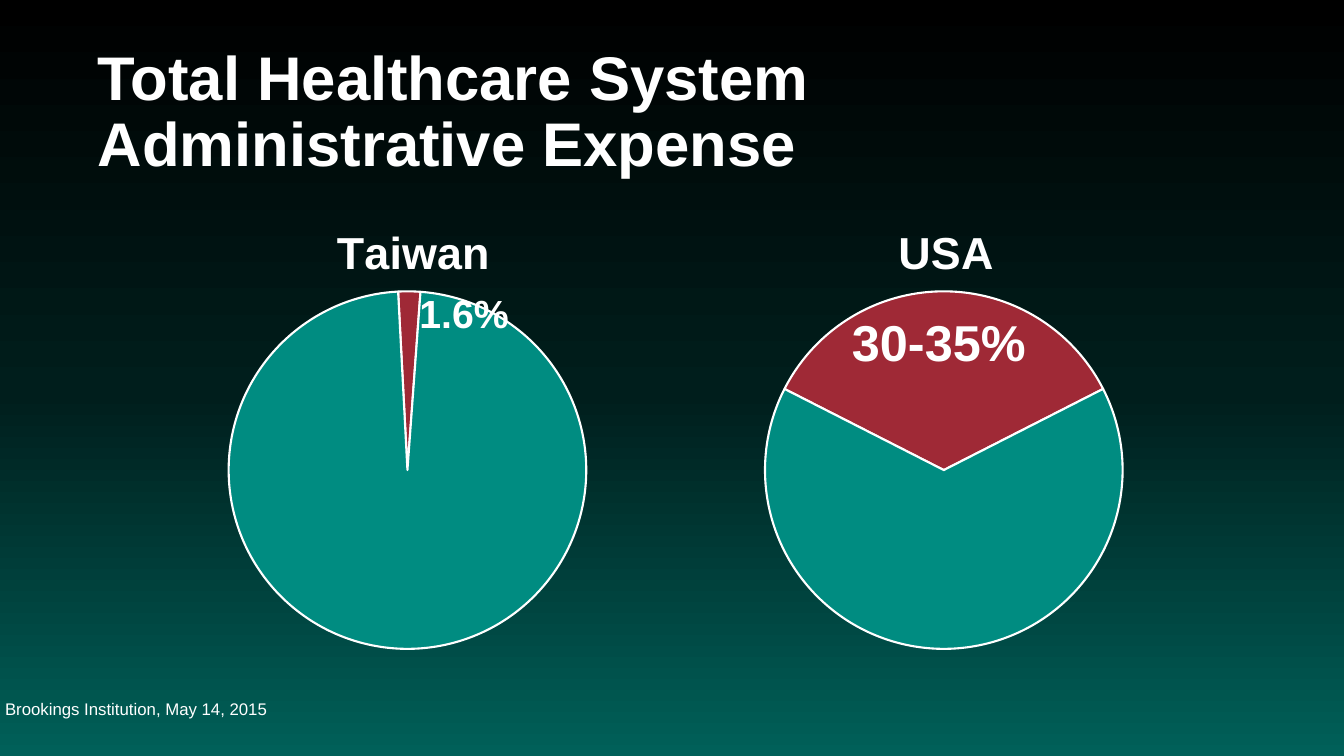
"""Build a slide comparing healthcare administrative expense in two pies."""
import copy

import pptx
import pptx.chart.data
import pptx.dml.color
import pptx.enum.chart
import pptx.enum.text
import pptx.oxml
import pptx.oxml.ns
import pptx.util

RGB = pptx.dml.color.RGBColor
WHITE = RGB(0xFF, 0xFF, 0xFF)
BLACK = RGB(0x00, 0x00, 0x00)
DARK_TEAL = RGB(0x00, 0x1E, 0x1C)
DEEP_TEAL = RGB(0x00, 0x60, 0x59)
TEAL = RGB(0x00, 0x8C, 0x81)
RED = RGB(0x9F, 0x29, 0x36)

WIDTH, HEIGHT = 13.33, 7.5
PIE_WIDTH, PIE_HEIGHT, PIE_TOP = 6.24, 4.73, 1.85
PIE_LEFT, PIE_STEP = 0.89, 5.32


def inches(*lengths):
    """Convert lengths in inches to slide units."""
    return [pptx.util.Inches(n) for n in lengths]


def style_font(font, size, bold=True, name="Arial"):
    """Apply the white lettering used on the slide."""
    font.size, font.bold, font.name = pptx.util.Pt(size), bold, name
    font.color.rgb = WHITE


def paint_background(s):
    """Fill the background with a vertical three-stop gradient."""
    fill = s.background.fill
    fill.gradient()
    fill.gradient_angle = 270
    stops = s.element.find(".//" + pptx.oxml.ns.qn("a:gsLst"))
    stops.insert(1, copy.deepcopy(stops[0]))
    levels = ((0, BLACK), (0.52, DARK_TEAL), (1, DEEP_TEAL))
    for stop, (position, color) in zip(fill.gradient_stops, levels):
        stop.position = position
        stop.color.rgb = color


def add_text(s, box, text, size, bold=True, wrap=True):
    """Add a text box; wrapped ones are centred vertically."""
    tf = s.shapes.add_textbox(*inches(*box)).text_frame
    tf.margin_left, tf.margin_top, tf.margin_right, tf.margin_bottom = inches(*[0.05] * 4)
    tf.word_wrap = wrap
    p = tf.paragraphs[0]
    p.text = text
    if wrap:
        tf.vertical_anchor = pptx.enum.text.MSO_ANCHOR.MIDDLE
        p.line_spacing = 0.9
    for r in p.runs:
        style_font(r.font, size, bold)


def set_layout(parent, position, **shares):
    """Place a chart part by shares of the chart's size."""
    for old in parent.findall(pptx.oxml.ns.qn("c:layout")):
        parent.remove(old)
    target = '<c:layoutTarget val="inner"/>' if "w" in shares else ""
    modes = "".join(f'<c:{k}Mode val="edge"/>' for k in "xy")
    values = "".join(f'<c:{k} val="{v}"/>' for k, v in shares.items())
    parent.insert(position, pptx.oxml.parse_xml(
        f'<c:layout {pptx.oxml.ns.nsdecls("c")}><c:manualLayout>'
        f"{target}{modes}{values}</c:manualLayout></c:layout>"))


def add_pie(s, column, country, share, start, title_x):
    """Add a titled pie whose first slice is the administrative share."""
    data = pptx.chart.data.CategoryChartData()
    data.categories = ["1", "2"]
    data.add_series(country, (share, 100 - share))
    left = PIE_LEFT + column * PIE_STEP
    chart = s.shapes.add_chart(
        pptx.enum.chart.XL_CHART_TYPE.PIE,
        *inches(left, PIE_TOP, PIE_WIDTH, PIE_HEIGHT), data).chart
    style_font(chart.font, 10, False, "Calibri")
    chart.has_legend = False
    tf = chart.chart_title.text_frame
    tf.text = country
    style_font(tf.paragraphs[0].runs[0].font, 32)
    chart.chart_title.include_in_layout = False
    set_layout(chart.chart_title.element, 1, x=title_x, y=0.06)

    plot = chart.plots[0]
    plot.vary_by_categories = True
    for i, color in enumerate((RED, TEAL)):
        fmt = plot.series[0].points[i].format
        fmt.fill.solid()
        fmt.fill.fore_color.rgb = color
        fmt.line.color.rgb = WHITE
        fmt.line.width = pptx.util.Pt(1.5)
    pie = chart.element.find(".//" + pptx.oxml.ns.qn("c:pieChart"))
    for old in pie.findall(pptx.oxml.ns.qn("c:firstSliceAng")):
        pie.remove(old)
    pie.append(pptx.oxml.parse_xml(
        f'<c:firstSliceAng {pptx.oxml.ns.nsdecls("c")} val="{start}"/>'))
    set_layout(pie.getparent(), 0, x=0.22, y=0.22, w=0.57, h=0.75)


def main():
    """Compose and save the slide."""
    prs = pptx.Presentation()
    prs.slide_width, prs.slide_height = inches(WIDTH, HEIGHT)
    s = prs.slides.add_slide(prs.slide_layouts[6])
    paint_background(s)
    add_pie(s, 0, "Taiwan", 2, 357, 0.38)
    add_pie(s, 1, "USA", 35, 297, 0.42)
    add_text(s, (0.92, 0.4, 11.5, 1.45),
             "Total Healthcare System\vAdministrative Expense", 44)
    add_text(s, (0, 6.58, 9, 0.92), "Brookings Institution, May 14, 2015", 12, bold=False)
    add_text(s, (4.11, 2.82, 1, 0.57), "1.6%", 28, wrap=False)
    add_text(s, (8.4, 3.04, 1.84, 0.71), "30-35%", 36, wrap=False)
    prs.save("out.pptx")


if __name__ == "__main__":
    main()
